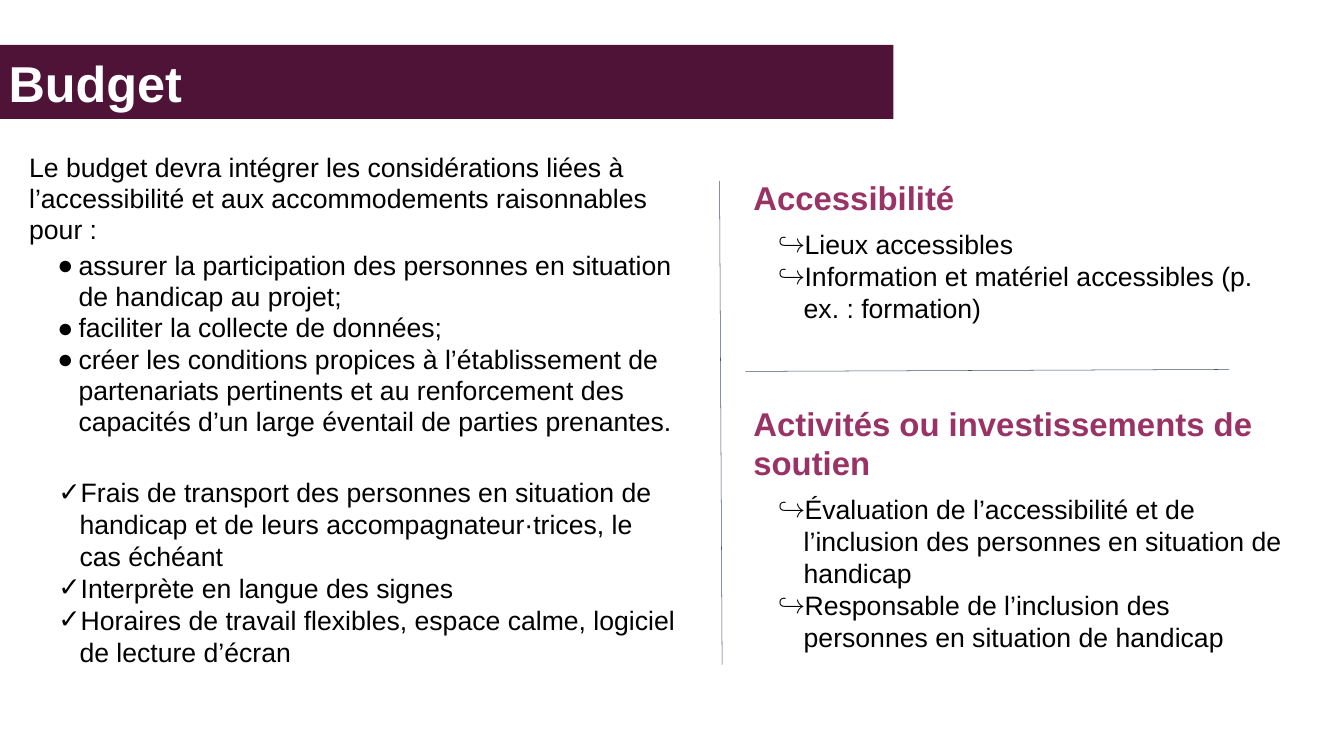
from dataclasses import dataclass

from lxml import etree
from pptx import Presentation
from pptx.dml.color import RGBColor
from pptx.enum.shapes import MSO_CONNECTOR
from pptx.enum.text import MSO_ANCHOR, MSO_AUTO_SIZE, PP_ALIGN
from pptx.oxml.ns import qn
from pptx.util import Inches, Pt

STRAIGHT = MSO_CONNECTOR.STRAIGHT
MIDDLE, TOP = MSO_ANCHOR.MIDDLE, MSO_ANCHOR.TOP
LEFT = PP_ALIGN.LEFT
NO_FIT = MSO_AUTO_SIZE.NONE

PLUM = RGBColor(0x4F, 0x13, 0x37)
BERRY = RGBColor(0x99, 0x33, 0x65)
SLATE = RGBColor(0x44, 0x54, 0x6A)
BLACK = RGBColor(0, 0, 0)
WHITE = RGBColor(255, 255, 255)

FONT = "Arial"
SLIDE_W, SLIDE_H = Inches(26.67), Inches(15)
TITLE_LAYOUT = 5
BODY_SIZE, HEADING_SIZE, TITLE_SIZE = 38, 47, 72


@dataclass
class Area:
    """Place and size in percent of the slide's width and height."""
    x: float
    y: float
    w: float
    h: float


@dataclass
class BulletList:
    """Items sharing a bullet; gap is the space in points above the list."""
    bullet: str
    items: list[str]
    margin: float
    hanging: float
    gap: float
    spacing: float = 1.0


@dataclass
class Panel:
    area: Area
    opening: str
    opening_format: dict
    lists: list[BulletList]


PANELS = [
    Panel(
        Area(1.8, 19.47, 48.93, 66.33),
        "Le budget devra intégrer les considérations liées à l’accessibilité "
        "et aux accommodements raisonnables pour :",
        {"spacing": 0.98},
        [
            BulletList("●", [
                "assurer la participation des personnes en situation de handicap au projet;",
                "faciliter la collecte de données;",
                "créer les conditions propices à l’établissement de partenariats pertinents "
                "et au renforcement des capacités d’un large éventail de parties prenantes.",
            ], 0.98, 0.42, 6, 0.98),
            BulletList("✓", [
                "Frais de transport des personnes en situation de handicap et de leurs "
                "accompagnateur·trices, le cas échéant",
                "Interprète en langue des signes",
                "Horaires de travail flexibles, espace calme, logiciel de lecture d’écran",
            ], 1, 0.42, 54),
        ],
    ),
    Panel(
        Area(55.68, 22.8, 40.08, 22.6),
        "Accessibilité",
        {"size": HEADING_SIZE, "color": BERRY, "bold": True},
        [BulletList("↪", [
            "Lieux accessibles",
            "Information et matériel accessibles (p. ex. : formation)",
        ], 1, 0.51, 16)],
    ),
    Panel(
        Area(55.68, 52.67, 40.08, 32.07),
        "Activités ou investissements de soutien",
        {"size": HEADING_SIZE, "color": BERRY, "bold": True},
        [BulletList("↪", [
            "Évaluation de l’accessibilité et de l’inclusion des personnes en situation de handicap",
            "Responsable de l’inclusion des personnes en situation de handicap",
        ], 1, 0.51, 16)],
    ),
]

# Start and end of each divider, in percent of the slide
DIVIDERS = [
    ((53.54, 23.93), (53.73, 87.93)),
    ((91.45, 48.87), (55.46, 49.13)),
]


def across(percent: float) -> int:
    return round(SLIDE_W * percent / 100)


def down(percent: float) -> int:
    return round(SLIDE_H * percent / 100)


def set_frame(frame, insets: tuple, anchor) -> None:
    frame.word_wrap = True
    frame.auto_size = NO_FIT
    frame.vertical_anchor = anchor
    (frame.margin_left, frame.margin_top,
     frame.margin_right, frame.margin_bottom) = map(Inches, insets)


def write(paragraph, text: str, *, size: float = BODY_SIZE, color: RGBColor = BLACK,
          bold: bool = False, before: float = 0, spacing: float = 1.0) -> None:
    paragraph.alignment = LEFT
    paragraph.space_before = Pt(before)
    paragraph.line_spacing = spacing
    run = paragraph.add_run()
    run.text = text
    run.font.name = FONT
    run.font.size = Pt(size)
    run.font.bold = bold
    run.font.color.rgb = color


def add_bullet(paragraph, style: BulletList) -> None:
    properties = paragraph._p.get_or_add_pPr()
    properties.set("marL", str(Inches(style.margin)))
    properties.set("indent", str(-Inches(style.hanging)))
    color = etree.SubElement(properties, qn("a:buClr"))
    etree.SubElement(color, qn("a:srgbClr"), val=str(BLACK))
    etree.SubElement(properties, qn("a:buFont"), typeface=FONT)
    etree.SubElement(properties, qn("a:buChar"), char=style.bullet)


def add_title(slide, text: str, area: Area) -> None:
    title = slide.shapes.title
    title.left, title.top = across(area.x), down(area.y)
    title.width, title.height = across(area.w), down(area.h)
    title.fill.solid()
    title.fill.fore_color.rgb = PLUM
    set_frame(title.text_frame, (0.17, 0.06, 0.06, 0.06), MIDDLE)
    write(title.text_frame.paragraphs[0], text, size=TITLE_SIZE, color=WHITE, bold=True)


def add_panel(slide, panel: Panel) -> None:
    area = panel.area
    box = slide.shapes.add_textbox(across(area.x), down(area.y), across(area.w), down(area.h))
    frame = box.text_frame
    set_frame(frame, (0.1, 0.1, 0.1, 0.1), TOP)
    write(frame.paragraphs[0], panel.opening, **panel.opening_format)
    for group in panel.lists:
        for index, item in enumerate(group.items):
            paragraph = frame.add_paragraph()
            add_bullet(paragraph, group)
            write(paragraph, item, before=0 if index else group.gap, spacing=group.spacing)


def add_divider(slide, start: tuple[float, float], end: tuple[float, float]) -> None:
    line = slide.shapes.add_connector(
        STRAIGHT, across(start[0]), down(start[1]), across(end[0]), down(end[1]))
    line.line.color.rgb = SLATE
    line.line.width = Pt(0.75)
    etree.SubElement(line._element.spPr, qn("a:effectLst"))


def main() -> None:
    deck = Presentation()
    deck.slide_width, deck.slide_height = SLIDE_W, SLIDE_H
    slide = deck.slides.add_slide(deck.slide_layouts[TITLE_LAYOUT])

    # Title band
    add_title(slide, "Budget", Area(0, 5.93, 66.48, 9.8))

    # Text panels
    for panel in PANELS:
        add_panel(slide, panel)

    # Dividers between the panels
    for start, end in DIVIDERS:
        add_divider(slide, start, end)

    deck.save("out.pptx")


if __name__ == "__main__":
    main()
